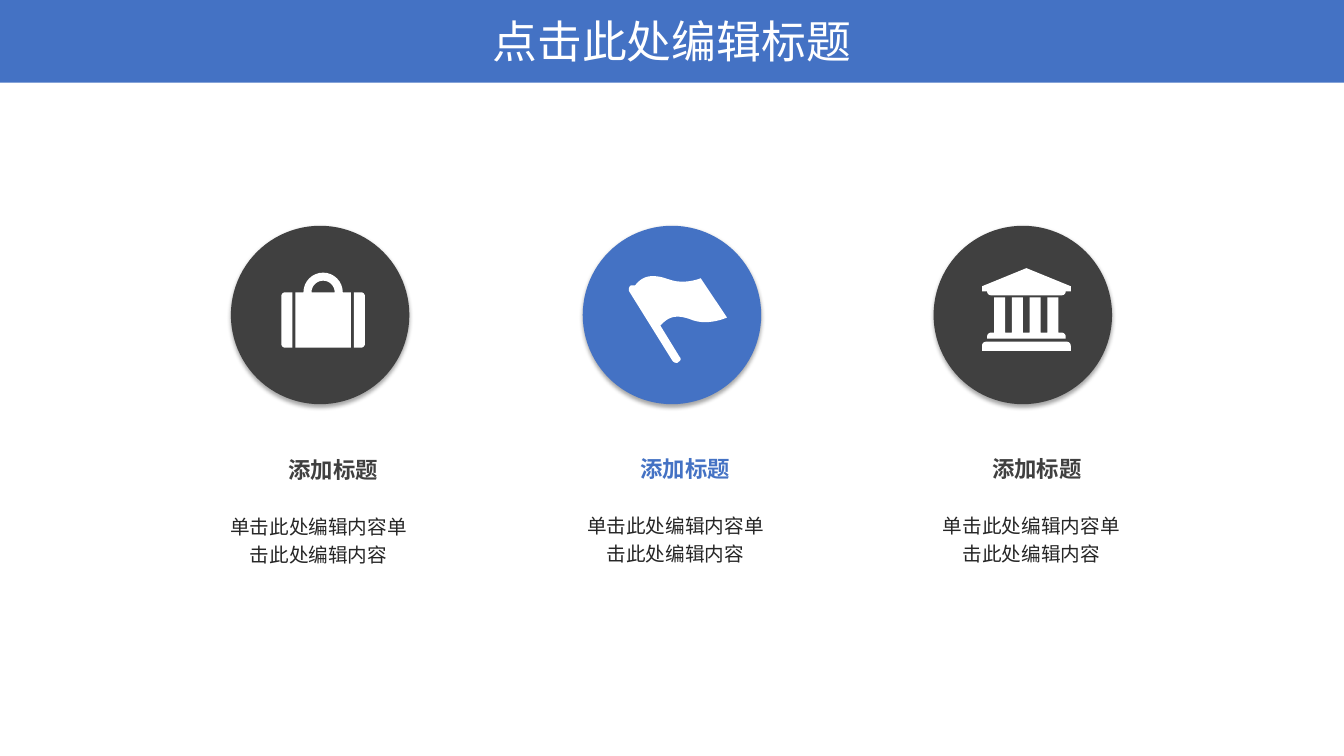
from math import cos, radians, sin

from lxml import etree
from pptx import Presentation
from pptx.dml.color import RGBColor
from pptx.enum.shapes import MSO_SHAPE
from pptx.enum.text import MSO_AUTO_SIZE, PP_ALIGN
from pptx.oxml.ns import qn
from pptx.util import Inches, Pt

BLUE = RGBColor(0x44, 0x72, 0xC4)
DARK = RGBColor(0x40, 0x40, 0x40)
INK = RGBColor(0x26, 0x26, 0x26)
WHITE = RGBColor(0xFF, 0xFF, 0xFF)
FONT = "Noto Sans CJK SC"

CIRCLE_TOP, CIRCLE_SIZE = 2.24, 1.77


def paint(shape, color):
    shape.shadow.inherit = False
    shape.fill.solid()
    shape.fill.fore_color.rgb = color
    shape.line.fill.background()


def add_solid(slide, kind, left, top, width, height, color):
    solid = slide.shapes.add_shape(
        kind, Inches(left), Inches(top), Inches(width), Inches(height))
    paint(solid, color)
    return solid


def add_soft_shadow(shape):
    effects = shape._element.spPr.find(qn("a:effectLst"))
    shadow = etree.SubElement(
        effects, qn("a:outerShdw"), blurRad=str(Pt(3.1)), dist=str(Pt(1.8)),
        dir="5400000", algn="t", rotWithShape="0")
    black = etree.SubElement(shadow, qn("a:srgbClr"), val="000000")
    etree.SubElement(black, qn("a:alpha"), val="35000")


def add_text(slide, text, left, top, width, height, size, color,
             bold=False, spacing=None):
    box = slide.shapes.add_textbox(
        Inches(left), Inches(top), Inches(width), Inches(height))
    frame = box.text_frame
    frame.word_wrap = True
    frame.auto_size = MSO_AUTO_SIZE.SHAPE_TO_FIT_TEXT
    frame.text = text
    paragraph = frame.paragraphs[0]
    paragraph.alignment = PP_ALIGN.CENTER
    paragraph.line_spacing = spacing
    font = paragraph.font
    font.size, font.bold, font.name = Pt(size), bold, FONT
    font.color.rgb = color
    # East Asian characters take their own typeface entry
    defaults = paragraph._p.pPr.find(qn("a:defRPr"))
    etree.SubElement(defaults, qn("a:ea"), typeface=FONT)


def add_icon(slide, contours):
    """Draw closed outlines, given in inches, as one white shape."""
    outlines = [[(Inches(x), Inches(y)) for x, y in c] for c in contours]
    builder = slide.shapes.build_freeform(*outlines[0][0])
    for number, outline in enumerate(outlines):
        if number:
            builder.move_to(*outline[0])
        builder.add_line_segments(outline[1:], close=True)
    paint(builder.convert_to_shape(), WHITE)


def arc(x, y, radius, start, end, steps=16):
    angles = [radians(start + (end - start) * i / steps)
              for i in range(steps + 1)]
    return [(x + radius * cos(a), y + radius * sin(a)) for a in angles]


def curve(p0, p1, p2, p3, steps=12):
    """Sample a cubic Bezier curve."""
    points = []
    for i in range(steps + 1):
        t = i / steps
        u = 1 - t
        weights = (u ** 3, 3 * u * u * t, 3 * u * t * t, t ** 3)
        points.append(tuple(sum(w * p[axis] for w, p in
                                zip(weights, (p0, p1, p2, p3)))
                            for axis in (0, 1)))
    return points


def suitcase():
    top, bottom, r = 2.9, 3.45, 0.04
    middle = 3.205
    left_side = ([(2.9, top), (2.9, bottom)]
                 + arc(2.79 + r, bottom - r, r, 90, 180, 6)
                 + arc(2.79 + r, top + r, r, 180, 270, 6))
    right_side = [(2 * middle - x, y) for x, y in left_side]
    body = ([(2.93, bottom), (2.93, top)]
            + arc(middle, top, 0.195, 180, 360)
            + [(3.48, top), (3.48, bottom)])
    handle_hole = arc(middle, top, 0.115, 180, 360)
    return [body, handle_hole, left_side, right_side]


def flag():
    return [
        curve((6.95, 2.76), (6.95, 2.76), (6.79, 2.83), (6.63, 2.77))
        + curve((6.63, 2.77), (6.46, 2.71), (6.37, 2.74), (6.3, 2.83))
        + curve((6.3, 2.83), (6.28, 2.83), (6.27, 2.83), (6.26, 2.83), 4)
        + curve((6.26, 2.83), (6.24, 2.84), (6.23, 2.87), (6.24, 2.89), 6)
        + curve((6.67, 3.58), (6.68, 3.59), (6.69, 3.6), (6.71, 3.6), 4)
        + curve((6.71, 3.6), (6.72, 3.6), (6.72, 3.6), (6.73, 3.59), 4)
        + curve((6.73, 3.59), (6.75, 3.58), (6.76, 3.56), (6.74, 3.54), 6)
        + curve((6.55, 3.23), (6.63, 3.14), (6.71, 3.11), (6.88, 3.18))
        + curve((6.88, 3.18), (7.04, 3.23), (7.21, 3.15), (7.21, 3.15))
    ]


def temple():
    left, right, r = 9.74, 10.62, 0.04
    inner_left, inner_right = left + 0.05, right - 0.05
    roof = ([(10.18, 2.66), (right, 2.84), (right, 2.89), (inner_right, 2.89)]
            + arc(inner_right - r, 2.89, r, 0, 90, 6)
            + arc(inner_left + r, 2.89, r, 90, 180, 6)
            + [(left, 2.89), (left, 2.84)])
    step = ([(left, 3.48), (left, 3.43)]
            + arc(left + r, 3.39 + r, r, 180, 270, 6)
            + arc(right - r, 3.39 + r, r, 270, 360, 6)
            + [(right, 3.48)])
    columns = []
    for i in range(4):
        x = 9.86 + 0.176 * i
        columns += [(x, 3.3), (x, 2.95), (x + 0.11, 2.95), (x + 0.11, 3.3)]
    base = ([(inner_left, 3.36)]
            + arc(inner_left + r, 3.3 + r, r, 180, 270, 6)
            + columns
            + arc(inner_right - r, 3.3 + r, r, 270, 360, 6)
            + [(inner_right, 3.36)])
    return [roof, step, base]


def add_topic(slide, circle_left, heading_at, body_at, color, icon):
    circle = add_solid(slide, MSO_SHAPE.OVAL, circle_left, CIRCLE_TOP,
                       CIRCLE_SIZE, CIRCLE_SIZE, color)
    add_soft_shadow(circle)
    add_icon(slide, icon)
    add_text(slide, "添加标题", *heading_at, 1.39, 0.37, 16, color, bold=True)
    add_text(slide, "单击此处编辑内容单击此处编辑内容", *body_at, 2.04, 0.95,
             14, INK, spacing=1.2)


def main():
    prs = Presentation()
    prs.slide_width, prs.slide_height = Inches(13.33), Inches(7.5)
    slide = prs.slides.add_slide(prs.slide_layouts[6])

    # Title band
    add_solid(slide, MSO_SHAPE.RECTANGLE, 0, 0, 13.33, 0.82, BLUE)
    add_text(slide, "点击此处编辑标题", 4.66, 0.09, 4.01, 0.64, 32, WHITE)

    # Three topics, left to right
    add_topic(slide, 2.29, (2.61, 4.48), (2.14, 5.01), DARK, suitcase())
    add_topic(slide, 5.78, (6.1, 4.47), (5.68, 5), BLUE, flag())
    add_topic(slide, 9.26, (9.59, 4.47), (9.21, 5), DARK, temple())

    prs.save("out.pptx")


if __name__ == "__main__":
    main()
